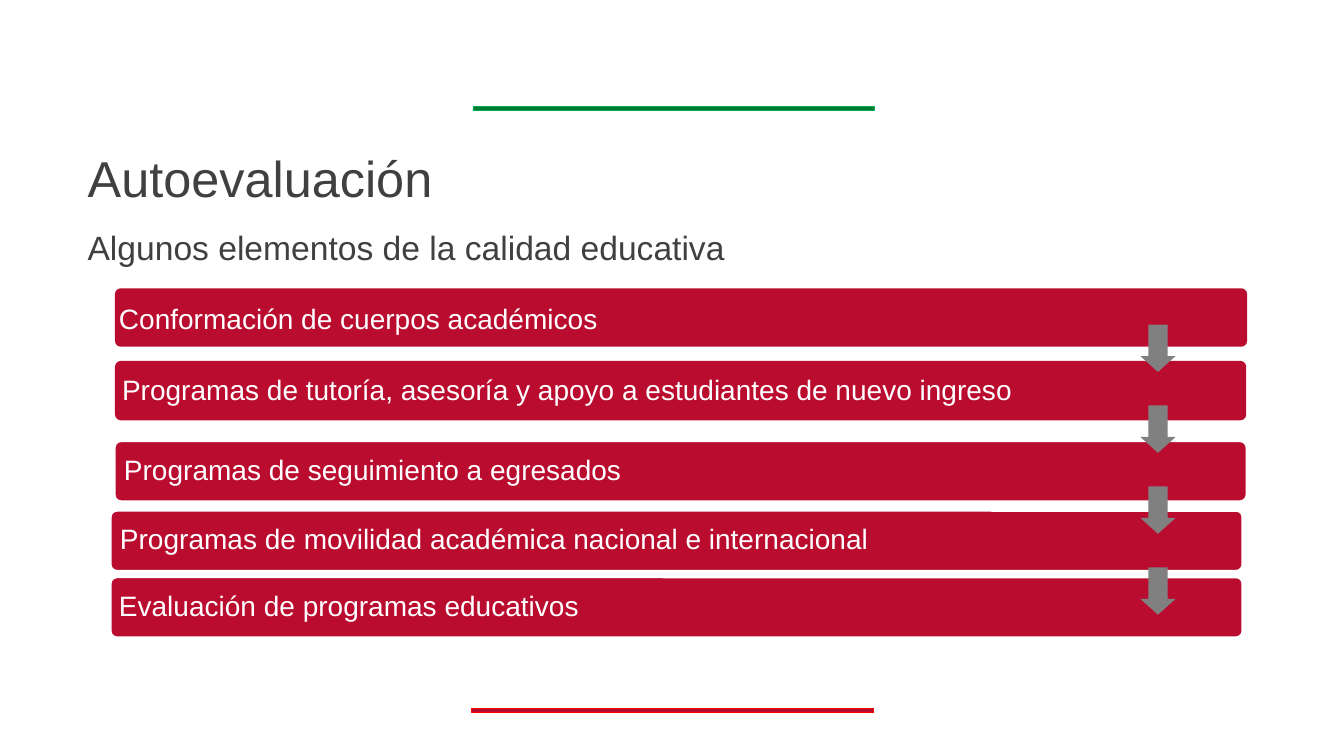
from dataclasses import dataclass

from pptx import Presentation
from pptx.dml.color import RGBColor
from pptx.enum.shapes import MSO_SHAPE
from pptx.enum.text import MSO_ANCHOR, MSO_AUTO_SIZE, PP_ALIGN
from pptx.util import Inches, Pt

RECTANGLE = MSO_SHAPE.RECTANGLE
ROUNDED = MSO_SHAPE.ROUNDED_RECTANGLE
DOWN_ARROW = MSO_SHAPE.DOWN_ARROW
TOP, MIDDLE, BOTTOM = MSO_ANCHOR.TOP, MSO_ANCHOR.MIDDLE, MSO_ANCHOR.BOTTOM

TITLE = "Autoevaluación"
SUBTITLE = "Algunos elementos de la calidad educativa"

# Text, bar (left, top, width, height), label (left, top, width, height), outlined
ELEMENTS = [
    ("Conformación de cuerpos académicos",
     (1.14, 2.86, 11.23, 0.58), (1.11, 2.9, 9.72, 0.55), False),
    ("Programas de tutoría, asesoría y apoyo a estudiantes de nuevo ingreso",
     (1.14, 3.58, 11.22, 0.59), (1.14, 3.6, 10.25, 0.56), False),
    ("Programas de seguimiento a egresados",
     (1.14, 4.38, 11.22, 0.59), (1.16, 4.4, 9.53, 0.56), True),
    ("Programas de movilidad académica nacional e internacional",
     (1.1, 5.07, 11.22, 0.59), (1.12, 5.08, 9.53, 0.56), True),
    ("Evaluación de programas educativos",
     (1.1, 5.73, 11.22, 0.59), (1.11, 5.75, 9.54, 0.56), True),
]

ARROW_LEFT, ARROW_TOP, ARROW_STEP = 11.31, 3.22, 0.803
ARROW_WIDTH, ARROW_HEIGHT = 0.35, 0.47


@dataclass(frozen=True)
class Theme:
    font: str = "Arial"
    title_size: int = 36
    subtitle_size: int = 24
    label_size: int = 20
    ink: str = "404040"
    white: str = "FFFFFF"
    crimson: str = "BA0C2F"
    red: str = "FF0000"
    green: str = "007A33"
    bright_green: str = "00B050"
    gray: str = "808080"


THEME = Theme()


def add_figure(shapes, kind, bounds, fill, line=None, line_width=1, adjustments=()):
    figure = shapes.add_shape(kind, *map(Inches, bounds))
    figure.shadow.inherit = False
    figure.fill.solid()
    figure.fill.fore_color.rgb = RGBColor.from_string(fill)
    if line:
        figure.line.color.rgb = RGBColor.from_string(line)
        figure.line.width = Pt(line_width)
    else:
        figure.line.fill.background()
    for index, value in enumerate(adjustments):
        figure.adjustments[index] = value


def write_text(box, text, size, color, anchor, inset=None):
    """Fill a text box or placeholder with one left-aligned paragraph."""
    frame = box.text_frame
    frame.word_wrap = True
    frame.auto_size = MSO_AUTO_SIZE.NONE
    frame.vertical_anchor = anchor
    if inset is not None:
        frame.margin_left = frame.margin_right = Inches(inset)
        frame.margin_top = frame.margin_bottom = Inches(inset)
    para = frame.paragraphs[0]
    para.alignment = PP_ALIGN.LEFT
    para.line_spacing = 0.9
    span = para.add_run()
    span.text = text
    span.font.name = THEME.font
    span.font.size = Pt(size)
    span.font.color.rgb = RGBColor.from_string(color)


def add_headings(page):
    title = page.shapes.title
    title.left, title.top = Inches(0.77), Inches(1.31)
    title.width, title.height = Inches(11.12), Inches(0.81)
    write_text(title, TITLE, THEME.title_size, THEME.ink, BOTTOM)
    subtitle = page.shapes.add_textbox(
        title.left, Inches(2.25), title.width, title.height)
    write_text(subtitle, SUBTITLE, THEME.subtitle_size, THEME.ink, TOP)


def add_elements(page):
    for text, bar, label, outlined in ELEMENTS:
        group = page.shapes.add_group_shape()
        add_figure(group.shapes, ROUNDED, bar, THEME.crimson,
                   line=THEME.white if outlined else None, adjustments=[0.1])
        box = group.shapes.add_textbox(*map(Inches, label))
        write_text(box, text, THEME.label_size, THEME.white, MIDDLE, inset=0.07)


def add_arrows(page):
    for index in range(len(ELEMENTS) - 1):
        top = ARROW_TOP + index * ARROW_STEP
        add_figure(page.shapes, DOWN_ARROW,
                   (ARROW_LEFT, top, ARROW_WIDTH, ARROW_HEIGHT),
                   THEME.gray, adjustments=[0.55, 0.45])


def main():
    deck = Presentation()
    deck.slide_width, deck.slide_height = Inches(13.33), Inches(7.5)
    page = deck.slides.add_slide(deck.slide_layouts.get_by_name("Title Only"))
    add_figure(page.shapes, RECTANGLE, (4.68, 7.03, 3.98, 0.04),
               THEME.crimson, line=THEME.red, line_width=0.5)
    add_figure(page.shapes, RECTANGLE, (4.69, 1.06, 3.98, 0.04),
               THEME.green, line=THEME.bright_green, line_width=0.5)
    add_headings(page)
    add_elements(page)
    add_arrows(page)
    deck.save("out.pptx")


if __name__ == "__main__":
    main()
